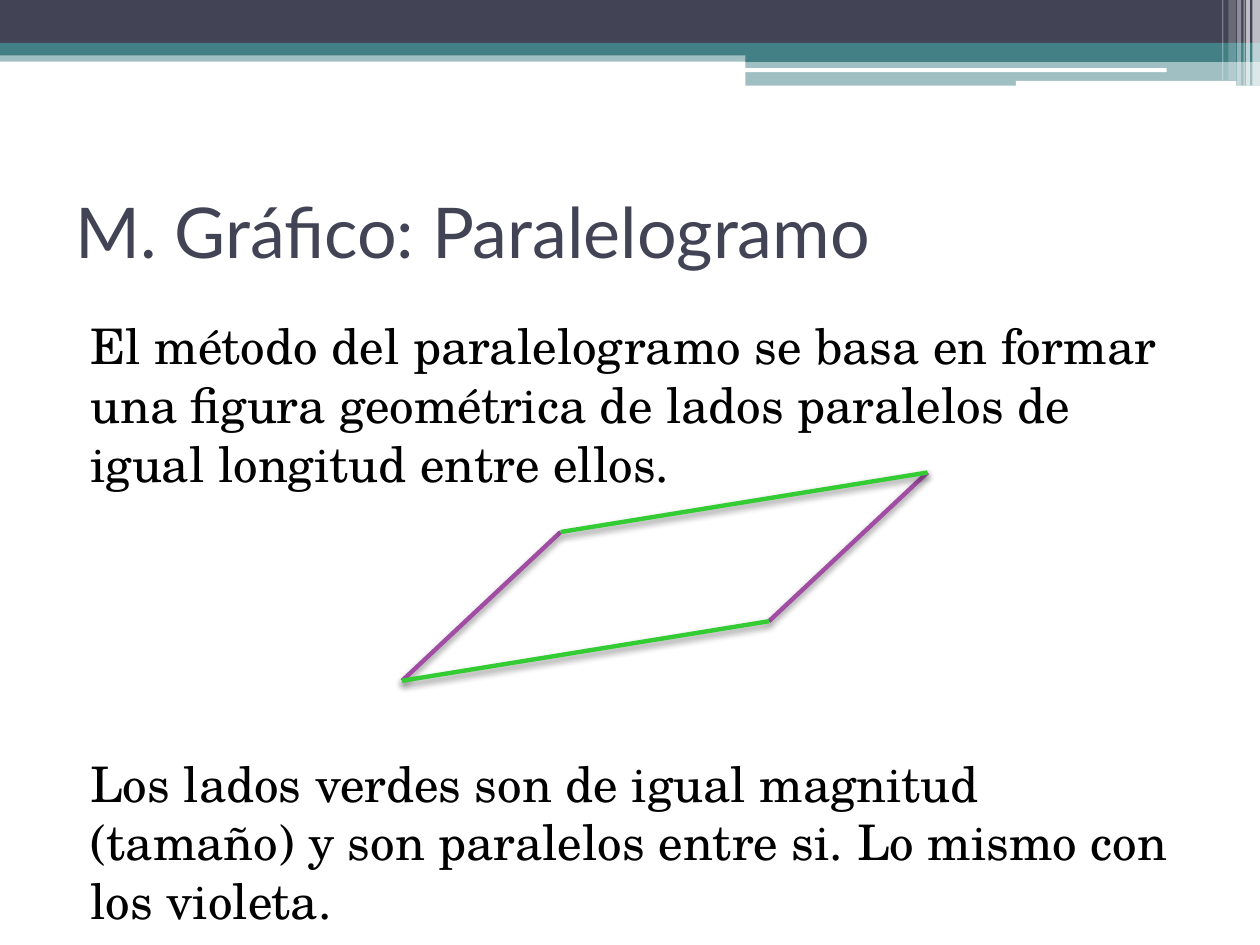
import pptx
import pptx.dml.color
import pptx.enum.shapes
import pptx.enum.text
import pptx.oxml
import pptx.oxml.ns
import pptx.util
from lxml import etree

Pt = pptx.util.Pt
qn = pptx.oxml.ns.qn
SHAPES = pptx.enum.shapes.MSO_SHAPE
ANCHORS = pptx.enum.text.MSO_ANCHOR

COLORS = {
    "slate": "424456",
    "teal": "438086",
    "white": "FFFFFF",
    "black": "000000",
    "violet": "A04DA3",
    "green": "33CC33",
}

# left, top, width, height, colour, opacity in percent
BANDS = [
    (0, 28.8, 720, 6.5, "teal", 50),
    (0, 0, 720, 24.5, "slate", 100),
    (0, 24.5, 720, 7.2, "teal", 100),
    (426, 28.2, 294, 7.2, "teal", 100),
    (426, 34.8, 294, 14.2, "teal", 50),
]
# left, top, width, height
ROUNDED_BARS = [(425.5, 39, 241.2, 2.2), (580.5, 46.2, 126, 2.9)]
# left, width, height, opacity in percent
STRIPES = [
    (715.7, 4.3, 49, 65),
    (712, 2.2, 49, 65),
    (710.6, 0.7, 49, 60),
    (707, 2.2, 49, 40),
    (702, 4.3, 46, 20),
    (698.4, 0.7, 46, 30),
]


def rgb(name):
    return pptx.dml.color.RGBColor.from_string(COLORS[name])


def add_bar(page, bounds, color, opacity=100, kind=SHAPES.RECTANGLE):
    bar = page.shapes.add_shape(kind, *(Pt(value) for value in bounds))
    bar.shadow.inherit = False
    bar.fill.solid()
    bar.fill.fore_color.rgb = rgb(color)
    bar.line.fill.background()
    if opacity < 100:
        tint = bar.fill._xPr.find(".//" + qn("a:srgbClr"))
        etree.SubElement(tint, qn("a:alpha"), val=str(opacity * 1000))


def add_text(page, bounds, paragraphs, font, size, color, anchor, indent=0):
    """Each paragraph is a pair of its wording and the space before it."""
    box = page.shapes.add_textbox(*(Pt(value) for value in bounds))
    frame = box.text_frame
    frame.word_wrap = True
    frame.vertical_anchor = anchor
    for index, (wording, space) in enumerate(paragraphs):
        para = frame.add_paragraph() if index else frame.paragraphs[0]
        para.space_before = Pt(space)
        para._p.get_or_add_pPr().set("marL", str(Pt(indent)))
        span = para.add_run()
        span.text = wording
        span.font.name = font
        span.font.size = Pt(size)
        span.font.color.rgb = rgb(color)


def add_side(page, start, end, color):
    side = page.shapes.add_connector(
        pptx.enum.shapes.MSO_CONNECTOR.STRAIGHT,
        *(Pt(value) for value in (*start, *end)),
    )
    side.line.color.rgb = rgb(color)
    side.line.width = Pt(2.5)
    # Soft shadow straight below the line
    effects = etree.SubElement(side._element.spPr, qn("a:effectLst"))
    shadow = etree.SubElement(
        effects, qn("a:outerShdw"), blurRad=str(Pt(4)), dist=str(Pt(2)),
        dir=str(90 * 60000), rotWithShape="0",
    )
    tint = etree.SubElement(shadow, qn("a:srgbClr"), val=COLORS["black"])
    etree.SubElement(tint, qn("a:alpha"), val="45000")


def add_parallelogram(page, corner, violet_step, green_step):
    def move(point, step):
        return point[0] + step[0], point[1] + step[1]

    upper, lower = move(corner, violet_step), move(corner, green_step)
    far = move(upper, green_step)
    add_side(page, corner, upper, "violet")
    add_side(page, lower, far, "violet")
    add_side(page, corner, lower, "green")
    add_side(page, upper, far, "green")


def main():
    deck = pptx.Presentation()
    deck.slide_width, deck.slide_height = Pt(720), Pt(540)
    page = deck.slides.add_slide(deck.slide_layouts[6])

    # Header decoration
    for *bounds, color, opacity in BANDS:
        add_bar(page, bounds, color, opacity)
    for bounds in ROUNDED_BARS:
        add_bar(page, bounds, "white", kind=SHAPES.ROUNDED_RECTANGLE)
    for left, width, height, opacity in STRIPES:
        add_bar(page, (left, 0, width, height), "white", opacity)

    # Explanation, with room for the figure between its paragraphs
    add_text(
        page, (36, 177, 648, 363),
        [
            ("El método del paralelogramo se basa en formar una figura "
             "geométrica de lados paralelos de igual longitud entre ellos.", 3),
            ("Los lados verdes son de igual magnitud (tamaño) y son "
             "paralelos entre si. Lo mismo con los violeta.", 149),
        ],
        "TeX Gyre Schola", 28, "black", ANCHORS.TOP, indent=8.6,
    )

    # Title
    add_text(page, (36, 90, 648, 84), [("M. Gráfico: Paralelogramo", 0)],
             "Lato", 40, "slate", ANCHORS.MIDDLE)

    # Figure
    add_parallelogram(page, (229.8, 389), (90.6, -85), (209.6, -34))

    deck.save("out.pptx")


if __name__ == "__main__":
    main()
